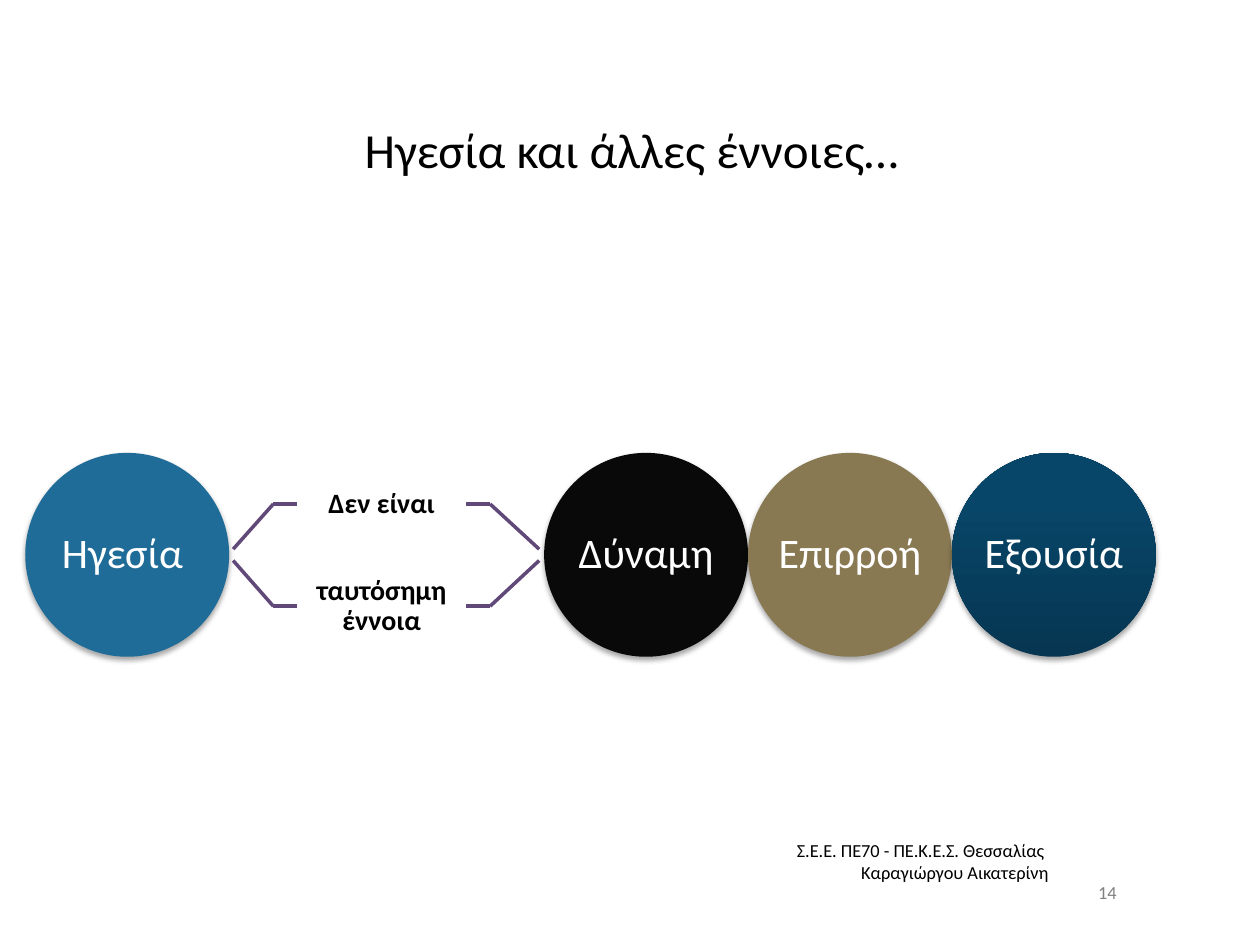
from lxml.etree import SubElement
from pptx import Presentation
from pptx.dml.color import RGBColor
from pptx.enum.shapes import MSO_CONNECTOR, MSO_SHAPE
from pptx.enum.text import MSO_ANCHOR, PP_ALIGN
from pptx.oxml.ns import qn
from pptx.util import Cm, Pt

COLORS = {
    "leadership": "206C98",
    "power": "090909",
    "influence": "887952",
    "authority_dark": "063651",
    "authority_light": "084669",
    "bracket": "604878",
    "text": "000000",
    "circle_text": "FFFFFF",
    "page_number": "808080",
}
FONT = "Calibri"
DIAMETER = 4.11
CIRCLE_TOP = 9.13


def rgb(name):
    return RGBColor.from_string(COLORS[name])


def write(shape, text, size, color="text", bold=False, align=PP_ALIGN.CENTER,
          anchor=MSO_ANCHOR.MIDDLE, line_spacing=None, inset=None):
    frame = shape.text_frame
    frame.text = text
    frame.word_wrap = True
    frame.vertical_anchor = anchor
    if inset is not None:
        frame.margin_left = frame.margin_right = Cm(inset)
        frame.margin_top = frame.margin_bottom = Cm(inset)
    for paragraph in frame.paragraphs:
        paragraph.alignment = align
        paragraph.line_spacing = line_spacing
        for run in paragraph.runs:
            run.font.name = FONT
            run.font.size = Pt(size)
            run.font.bold = bold
            run.font.color.rgb = rgb(color)


def add_label(slide, text, left, top, width, height, size, **style):
    label = slide.shapes.add_textbox(Cm(left), Cm(top), Cm(width), Cm(height))
    write(label, text, size, **style)


def add_soft_shadow(shape):
    effects = SubElement(shape._element.spPr, qn("a:effectLst"))
    shadow = SubElement(effects, qn("a:outerShdw"), blurRad=str(Pt(3.1)),
                        dist=str(Pt(1.8)), dir="5400000", rotWithShape="0")
    black = SubElement(shadow, qn("a:srgbClr"), val="000000")
    SubElement(black, qn("a:alpha"), val="35000")


def add_concept(slide, text, left, *fill_colors):
    """Circle with a solid fill, or a gradient rising from the first colour."""
    circle = slide.shapes.add_shape(MSO_SHAPE.OVAL, Cm(left), Cm(CIRCLE_TOP),
                                    Cm(DIAMETER), Cm(DIAMETER))
    if len(fill_colors) == 1:
        circle.fill.solid()
        circle.fill.fore_color.rgb = rgb(fill_colors[0])
    else:
        circle.fill.gradient()
        circle.fill.gradient_angle = 90
        for stop, color, position in zip(circle.fill.gradient_stops, fill_colors, (0, 0.8)):
            stop.color.rgb = rgb(color)
            stop.position = position
    circle.line.fill.background()
    add_soft_shadow(circle)
    write(circle, text, 24, color="circle_text", line_spacing=0.9, inset=0)


def add_line(slide, start, end):
    points = [Cm(value) for value in (*start, *end)]
    line = slide.shapes.add_connector(MSO_CONNECTOR.STRAIGHT, *points)
    line.line.color.rgb = rgb("bracket")
    line.line.width = Pt(2)
    SubElement(line._element.spPr, qn("a:effectLst"))


def add_relation(slide, text, row_y, tip_y):
    """Label between two arms that reach towards the circles on either side."""
    for tip_x, bend_x, label_x in ((4.7, 5.51, 5.99), (10.87, 9.88, 9.4)):
        add_line(slide, (tip_x, tip_y), (bend_x, row_y))
        add_line(slide, (bend_x, row_y), (label_x, row_y))
    add_label(slide, text, 5.99, row_y - 1.02, 3.41, 2.04, 16,
              bold=True, line_spacing=0.9, inset=0.3)


def main():
    prs = Presentation()
    prs.slide_width, prs.slide_height = Cm(25.4), Cm(19.05)
    slide = prs.slides.add_slide(prs.slide_layouts[6])

    add_concept(slide, "Ηγεσία ", 0.51, "leadership")
    add_relation(slide, "Δεν είναι", 10.16, 11.07)
    add_relation(slide, "ταυτόσημη έννοια", 12.22, 11.3)
    concepts = (
        ("Δύναμη ", "power"),
        ("Επιρροή", "influence"),
        ("Εξουσία ", "authority_dark", "authority_light"),
    )
    for index, (text, *fill_colors) in enumerate(concepts):
        add_concept(slide, text, 10.97 + index * DIAMETER, *fill_colors)

    add_label(slide, "Ηγεσία και άλλες έννοιες…", 1.3, 1.52, 22.86, 2.97, 28)
    add_label(slide, "14", 21.59, 17.78, 1.47, 0.43, 10.5, color="page_number")
    add_label(slide, "Σ.Ε.Ε. ΠΕ70 - ΠΕ.Κ.Ε.Σ. Θεσσαλίας \nΚαραγιώργου Αικατερίνη",
              13.54, 17.5, 7.85, 0.43, 10.5,
              align=PP_ALIGN.RIGHT, anchor=MSO_ANCHOR.BOTTOM)
    prs.save("out.pptx")


if __name__ == "__main__":
    main()
